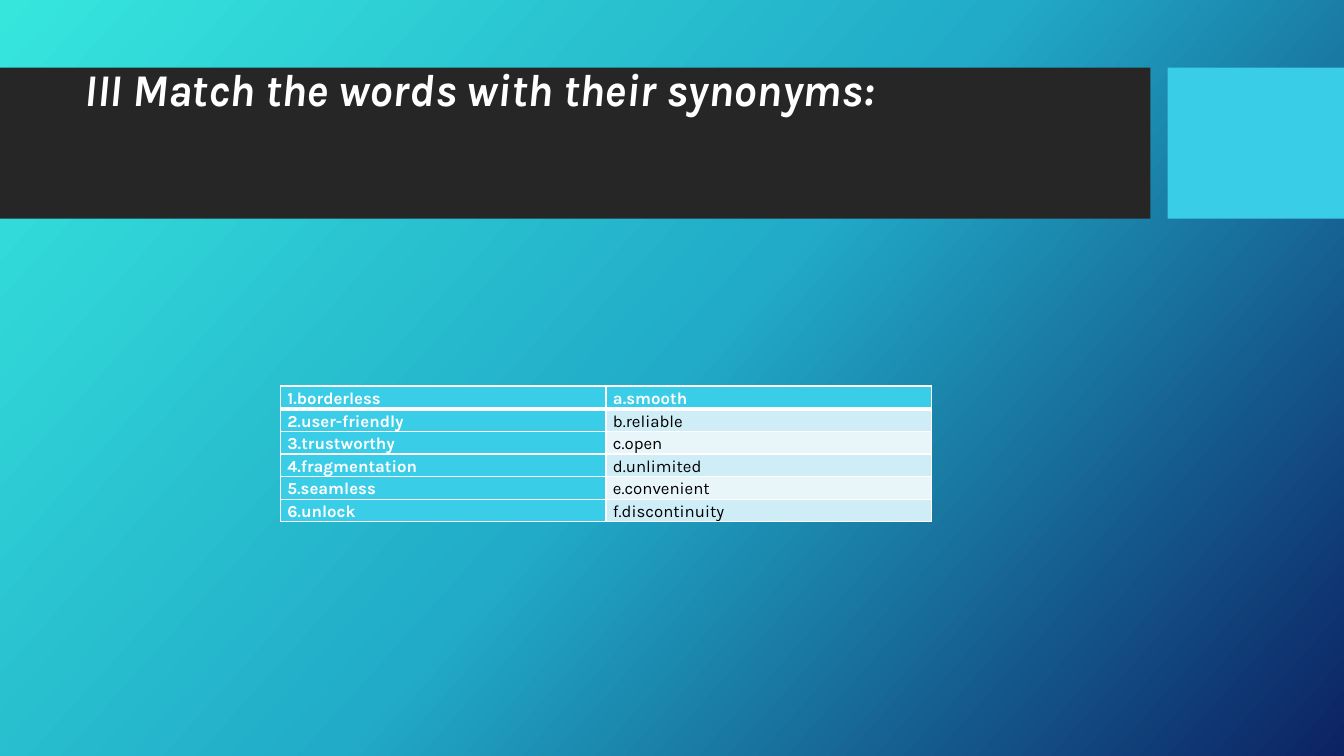
from lxml.etree import SubElement
from pptx import Presentation
from pptx.dml.color import RGBColor
from pptx.enum.shapes import MSO_SHAPE
from pptx.enum.text import MSO_ANCHOR, MSO_AUTO_SIZE, PP_ALIGN
from pptx.oxml import parse_xml
from pptx.oxml.ns import nsdecls, qn
from pptx.util import Inches, Pt

COLORS = {
    "white": "FFFFFF", "black": "000000", "charcoal": "262626",
    "cyan": "39CDE7", "band_dark": "CEEDF6", "band_light": "E8F6FA",
    "aqua": "36E6DD", "teal": "21ABC8", "navy": "0C2263",
}
WORD_PAIRS = [
    ("1.borderless", "a.smooth"),
    ("2.user-friendly", "b.reliable"),
    ("3.trustworthy", "c.open"),
    ("4.fragmentation", "d.unlimited"),
    ("5.seamless", "e.convenient"),
    ("6.unlock", "f.discontinuity"),
]
ROW_HEIGHT = 0.22


def write_text(text_frame, text, size, color="white", bold=False, italic=False,
               align=PP_ALIGN.LEFT, spacing=1.0):
    paragraph = text_frame.paragraphs[0]
    paragraph.alignment = align
    paragraph.line_spacing = spacing
    run = paragraph.add_run()
    run.text = text
    font = run.font
    font.name, font.size, font.bold, font.italic = "Karla", Pt(size), bold, italic
    font.color.rgb = RGBColor.from_string(COLORS[color])


def fill_solid(fill, color):
    fill.solid()
    fill.fore_color.rgb = RGBColor.from_string(COLORS[color])


def add_borders(cell, widths):
    """Draw white borders; widths are points for left, right, top and bottom."""
    properties = cell._tc.get_or_add_tcPr()
    for side, width in zip("LRTB", widths):
        line = SubElement(properties, qn(f"a:ln{side}"), w=str(Pt(width)))
        solid = SubElement(line, qn("a:solidFill"))
        SubElement(solid, qn("a:srgbClr"), val=COLORS["white"])


class SlideBuilder:
    def __init__(self, presentation):
        self.slide = presentation.slides.add_slide(presentation.slide_layouts[5])

    def background(self, stops, angle):
        """Fill the background with (percent, color) stops at a clockwise angle."""
        stop_xml = "".join(
            f'<a:gs pos="{percent * 1000}"><a:srgbClr val="{COLORS[color]}"/></a:gs>'
            for percent, color in stops)
        gradient = parse_xml(
            f'<a:gradFill {nsdecls("a")} rotWithShape="1"><a:gsLst>{stop_xml}</a:gsLst>'
            f'<a:lin ang="{angle * 60000}" scaled="0"/></a:gradFill>')
        fill = self.slide.background.fill
        fill.gradient()
        default = self.slide.element.find(".//" + qn("a:gradFill"))
        default.getparent().replace(default, gradient)

    def band(self, left, top, width, height, color):
        """Add a plain rectangle behind the title."""
        shapes = self.slide.shapes
        shape = shapes.add_shape(MSO_SHAPE.RECTANGLE, Inches(left), Inches(top),
                                 Inches(width), Inches(height))
        shape.shadow.inherit = False
        fill_solid(shape.fill, color)
        shape.line.fill.background()
        shapes._spTree.insert(2, shape._element)

    def title(self, text, left, top, width, height):
        title = self.slide.shapes.title
        title.left, title.top = Inches(left), Inches(top)
        title.width, title.height = Inches(width), Inches(height)
        frame = title.text_frame
        frame.word_wrap = True
        frame.auto_size = MSO_AUTO_SIZE.NONE
        frame.vertical_anchor = MSO_ANCHOR.TOP
        frame.margin_top = 0
        write_text(frame, text, 32.4, bold=True, italic=True, spacing=0.9)

    def table(self, rows, left, top, width):
        frame = self.slide.shapes.add_table(
            len(rows), len(rows[0]), Inches(left), Inches(top),
            Inches(width), Inches(ROW_HEIGHT * len(rows)))
        table = frame.table
        table.horz_banding = False
        for row_index, words in enumerate(rows):
            for column_index, word in enumerate(words):
                self.table_cell(table.cell(row_index, column_index), word,
                                row_index, column_index)

    def table_cell(self, cell, word, row_index, column_index):
        is_header = row_index == 0 or column_index == 0
        band_color = "band_dark" if row_index % 2 else "band_light"
        cell.margin_left = cell.margin_right = Inches(0.07)
        cell.margin_top = cell.margin_bottom = 0
        add_borders(cell, (1, 1, 3 if row_index == 1 else 1, 3 if row_index == 0 else 1))
        fill_solid(cell.fill, "cyan" if is_header else band_color)
        write_text(cell.text_frame, word, 12, color="white" if is_header else "black",
                   bold=is_header, align=PP_ALIGN.JUSTIFY, spacing=1.15)


def main():
    presentation = Presentation()
    presentation.slide_width, presentation.slide_height = Inches(13.33), Inches(7.5)
    builder = SlideBuilder(presentation)
    builder.background([(0, "aqua"), (50, "teal"), (100, "navy")], angle=42)
    builder.band(0, 0.67, 11.41, 1.5, "charcoal")
    builder.band(11.58, 0.67, 1.75, 1.5, "cyan")
    builder.title("III Match the words with their synonyms:", 0.74, 0.67, 10.51, 1.33)
    builder.table(WORD_PAIRS, 2.78, 3.83, 6.46)
    presentation.save("out.pptx")


if __name__ == "__main__":
    main()
